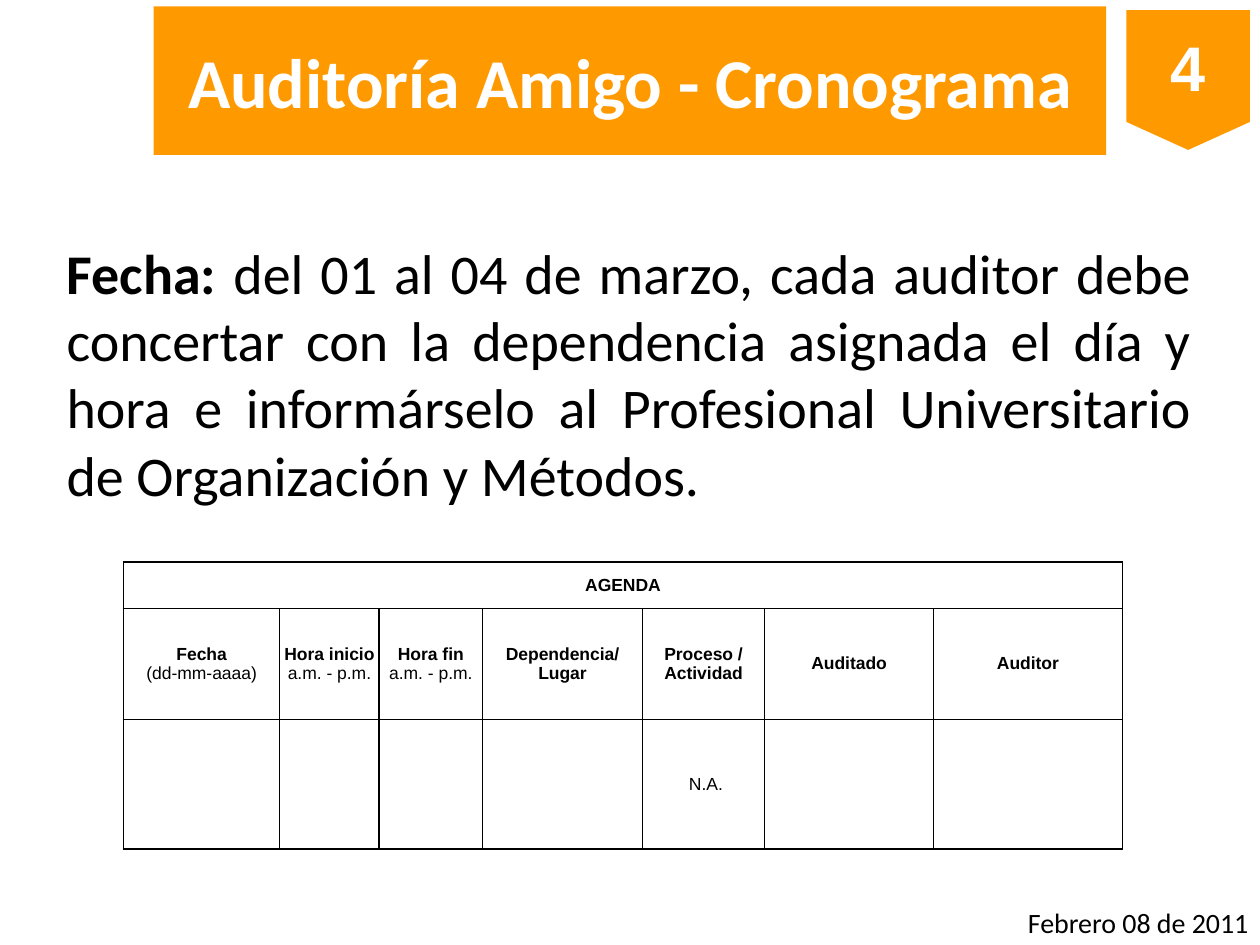
import pptx
import pptx.util
import pptx.dml.color
import pptx.enum.shapes
import pptx.enum.text
import pptx.oxml
import pptx.oxml.ns

Inches, Pt = pptx.util.Inches, pptx.util.Pt
RGBColor = pptx.dml.color.RGBColor
ALIGN = pptx.enum.text.PP_ALIGN
MIDDLE = pptx.enum.text.MSO_ANCHOR.MIDDLE

ORANGE = RGBColor(0xFF, 0x99, 0x00)
WHITE = RGBColor(0xFF, 0xFF, 0xFF)
BLACK = RGBColor(0, 0, 0)

TITLE = "Auditoría Amigo - Cronograma"
NUMBER = "4"
DATE = "Febrero 08 de 2011"
BODY = [
    ("Fecha:", True),
    (" del 01 al 04 de marzo, cada auditor debe concertar con la dependencia "
     "asignada el día y hora e informárselo al Profesional Universitario de "
     "Organización y Métodos.", False),
]
AGENDA = [
    [[("AGENDA", True)]] + [[]] * 6,
    [
        [("Fecha", True), ("(dd-mm-aaaa)", False)],
        [("Hora inicio", True), ("a.m. - p.m.", False)],
        [("Hora fin", True), ("a.m. - p.m.", False)],
        [("Dependencia/ Lugar", True)],
        [("Proceso / Actividad", True)],
        [("Auditado", True)],
        [("Auditor", True)],
    ],
    [[], [], [], [], [(" N.A.", False)], [], []],
]
COLUMNS = [1.24, 0.79, 0.82, 1.27, 0.97, 1.34, 1.5]
ROWS = [0.37, 0.88, 1.03]


def box(left, top, width, height):
    return [Inches(v) for v in (left, top, width, height)]


def style(p, name, size, color, align=ALIGN.LEFT):
    p.alignment = align
    p.font.name, p.font.size = name, Pt(size)
    p.font.color.rgb = color


def add_runs(p, runs, broken=False):
    for i, (text, bold) in enumerate(runs):
        if broken and i:
            p.add_line_break()
        r = p.add_run()
        r.text, r.font.bold = text, bold


def add_borders(cell):
    tcPr = cell._tc.get_or_add_tcPr()
    for side in "LRTB":
        tcPr.append(pptx.oxml.parse_xml(
            f'<a:ln{side} {pptx.oxml.ns.nsdecls("a")} w="{Pt(1)}">'
            f'<a:solidFill><a:srgbClr val="{BLACK}"/></a:solidFill></a:ln{side}>'))


def add_title(s):
    sp = s.shapes.title
    sp.left, sp.top, sp.width, sp.height = box(1.22, 0.05, 7.56, 1.18)
    sp.fill.solid()
    sp.fill.fore_color.rgb = ORANGE
    tf = sp.text_frame
    tf.text = TITLE
    tf.vertical_anchor = MIDDLE
    tf.auto_size = pptx.enum.text.MSO_AUTO_SIZE.NONE
    style(tf.paragraphs[0], "Calibri", 40, WHITE, ALIGN.CENTER)
    tf.paragraphs[0].font.bold = True


def add_number(s):
    sp = s.shapes.add_shape(
        pptx.enum.shapes.MSO_SHAPE.FLOWCHART_OFFPAGE_CONNECTOR,
        *box(8.94, 0.08, 0.98, 1.11))
    sp.shadow.inherit = False
    sp.fill.solid()
    sp.fill.fore_color.rgb = ORANGE
    sp.line.fill.background()
    tf = sp.text_frame
    tf.text = NUMBER
    tf.word_wrap = False
    tf.vertical_anchor = MIDDLE
    style(tf.paragraphs[0], "Arial", 36, WHITE, ALIGN.CENTER)
    tf.paragraphs[0].font.bold = True


def add_texts(s):
    tf = s.shapes.add_textbox(*box(8.06, 7.14, 1.98, 0.37)).text_frame
    tf.text = DATE
    tf.word_wrap = False
    style(tf.paragraphs[0], "Calibri", 16, BLACK)

    tf = s.shapes.add_textbox(*box(0.43, 1.66, 9.13, 2.6)).text_frame
    tf.word_wrap = True
    tf.vertical_anchor = MIDDLE
    add_runs(tf.paragraphs[0], BODY)
    style(tf.paragraphs[0], "Calibri", 32, BLACK, ALIGN.JUSTIFY)


def add_agenda(s):
    table = s.shapes.add_table(
        len(ROWS), len(COLUMNS),
        *box(0.98, 4.46, sum(COLUMNS), sum(ROWS))).table
    table.first_row = table.horz_banding = False
    for column, width in zip(table.columns, COLUMNS):
        column.width = Inches(width)
    for row, height, contents in zip(table.rows, ROWS, AGENDA):
        row.height = Inches(height)
        for cell, runs in zip(row.cells, contents):
            cell.margin_left = cell.margin_right = 0
            cell.margin_top = cell.margin_bottom = 0
            cell.vertical_anchor = MIDDLE
            add_borders(cell)
            cell.fill.background()
            p = cell.text_frame.paragraphs[0]
            add_runs(p, runs, broken=True)
            style(p, "Arial", 10, BLACK, ALIGN.CENTER)
    table.cell(0, 0).merge(table.cell(0, len(COLUMNS) - 1))


def main():
    prs = pptx.Presentation()
    prs.slide_width, prs.slide_height = Inches(10), Inches(7.5)
    s = prs.slides.add_slide(prs.slide_layouts[5])
    add_number(s)
    add_title(s)
    add_texts(s)
    add_agenda(s)
    prs.save("out.pptx")


if __name__ == "__main__":
    main()
